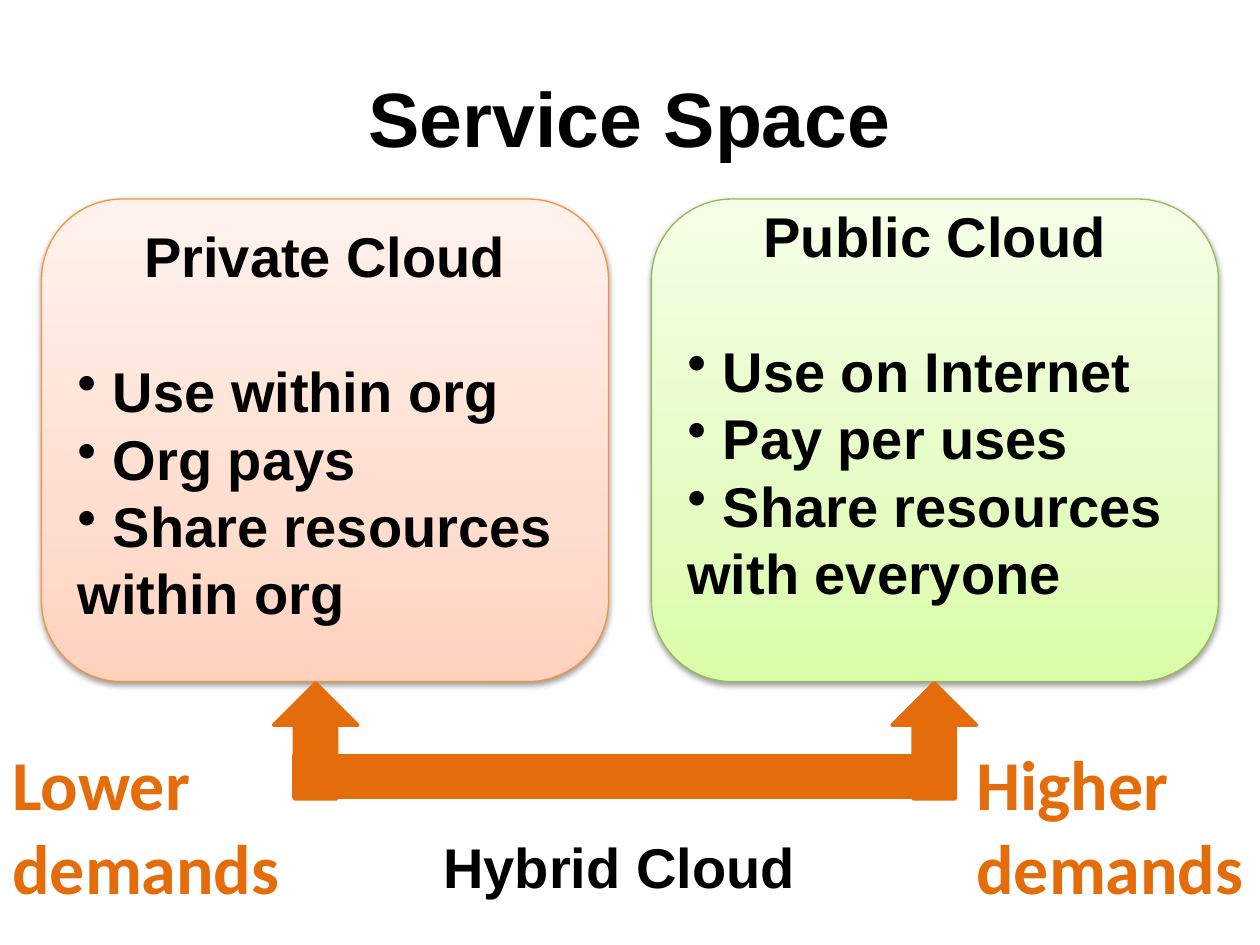
from lxml import etree
from pptx import Presentation
from pptx.dml.color import RGBColor
from pptx.enum.shapes import MSO_SHAPE as Preset
from pptx.enum.text import MSO_ANCHOR as Anchor, PP_ALIGN as Align
from pptx.oxml import parse_xml
from pptx.oxml.ns import nsdecls, qn
from pptx.util import Inches, Pt

# Content
TITLE = "Service Space"
CARDS = [
    dict(name="Private Cloud", left=0.33, bottom_inset=0.26, line="F69240",
         stops=["FFD2BD", "FFDED0", "FFF2ED"],
         points=["Use within org", "Org pays", "Share resources within org"]),
    dict(name="Public Cloud", left=5.17, bottom_inset=0.58, line="98B955",
         stops=["DAFDA7", "E4FCC2", "F5FFE7"],
         points=["Use on Internet", "Pay per uses",
                 "Share resources with everyone"]),
]
BRIDGE = "Hybrid Cloud"
DEMANDS = [(0, ["Lower", "demands"]), (7.65, ["Higher", "demands"])]

THEME = dict(ink="000000", accent="E46C0A", font="Arial", label_font="Calibri",
             title=44, body=32, label=40, pitch=38.5)
CARD_TOP, CARD_W, CARD_H = 1.58, 4.5, 3.83
STOP_POSITIONS = (0, 35, 100)


def rgb(value):
    return RGBColor.from_string(value)


def style(para, size, font=THEME["font"], color=THEME["ink"], align=Align.LEFT):
    para.alignment = align
    para.font.name, para.font.size, para.font.bold = font, Pt(size), True
    para.font.color.rgb = rgb(color)


def style_body(para, align=Align.LEFT):
    para.line_spacing = Pt(THEME["pitch"])
    style(para, THEME["body"], align=align)


def add_shape(page, preset, left, top, width, height, line, weight):
    shape = page.shapes.add_shape(preset, Inches(left), Inches(top),
                                  Inches(width), Inches(height))
    shape.shadow.inherit = False
    shape.line.color.rgb = rgb(line)
    shape.line.width = Pt(weight)
    return shape


def add_gradient_and_shadow(shape, colors):
    stops = "".join(
        f'<a:gs pos="{pos * 1000}"><a:srgbClr val="{color}"/></a:gs>'
        for pos, color in zip(STOP_POSITIONS, colors))
    gradient = parse_xml(
        f'<a:gradFill {nsdecls("a")} rotWithShape="1"><a:gsLst>{stops}</a:gsLst>'
        '<a:lin ang="16200000" scaled="0"/></a:gradFill>')
    properties = shape.element.spPr
    properties.find(qn("a:prstGeom")).addnext(gradient)
    properties.find(qn("a:effectLst")).append(parse_xml(
        f'<a:outerShdw {nsdecls("a")} blurRad="{Pt(3.1)}" dist="{Pt(1.6)}" '
        'dir="5400000" rotWithShape="0"><a:srgbClr val="000000">'
        '<a:alpha val="38000"/></a:srgbClr></a:outerShdw>'))


def add_card(page, card):
    box = add_shape(page, Preset.ROUNDED_RECTANGLE, card["left"], CARD_TOP,
                    CARD_W, CARD_H, card["line"], 0.75)
    add_gradient_and_shadow(box, card["stops"])
    frame = box.text_frame
    frame.word_wrap = True
    frame.vertical_anchor = Anchor.MIDDLE
    frame.margin_top, frame.margin_bottom = 0, Inches(card["bottom_inset"])
    heading = frame.paragraphs[0]
    heading.text = card["name"]
    heading.space_after = Pt(THEME["pitch"])
    style_body(heading, Align.CENTER)
    for point in card["points"]:
        para = frame.add_paragraph()
        para.text = " " + point
        bullet = etree.SubElement(para._p.get_or_add_pPr(), qn("a:buChar"))
        bullet.set("char", "•")
        style_body(para)


def add_text(page, left, top, width, height, lines, wrap):
    box = page.shapes.add_textbox(Inches(left), Inches(top),
                                  Inches(width), Inches(height))
    box.text_frame.word_wrap = wrap
    box.text_frame.text = "\n".join(lines)
    return box.text_frame.paragraphs


def main():
    deck = Presentation()
    deck.slide_width, deck.slide_height = Inches(10), Inches(7.5)
    page = deck.slides.add_slide(deck.slide_layouts[5])

    # Title
    title = page.shapes.title
    title.left, title.top = Inches(0.5), Inches(0.3)
    title.width, title.height = Inches(9), Inches(1.25)
    title.text_frame.text = TITLE
    title.text_frame.vertical_anchor = Anchor.MIDDLE
    style(title.text_frame.paragraphs[0], THEME["title"], align=Align.CENTER)

    # Cloud cards
    for card in CARDS:
        add_card(page, card)

    # Two arrows joined by a bar
    for preset, *place in [(Preset.UP_ARROW, 2.17, 5.42, 0.67, 0.92),
                           (Preset.UP_ARROW, 7.08, 5.42, 0.67, 0.92),
                           (Preset.RECTANGLE, 2.33, 6, 5.25, 0.33)]:
        part = add_shape(page, preset, *place, THEME["accent"], 2)
        part.fill.solid()
        part.fill.fore_color.rgb = rgb(THEME["accent"])

    # Labels
    for para in add_text(page, 3.42, 6.56, 3.25, 0.94, [BRIDGE], True):
        style_body(para)
    for left, lines in DEMANDS:
        for para in add_text(page, left, 5.83, 2.35, 1.45, lines, False):
            style(para, THEME["label"], THEME["label_font"], THEME["accent"])

    deck.save("out.pptx")


if __name__ == "__main__":
    main()
